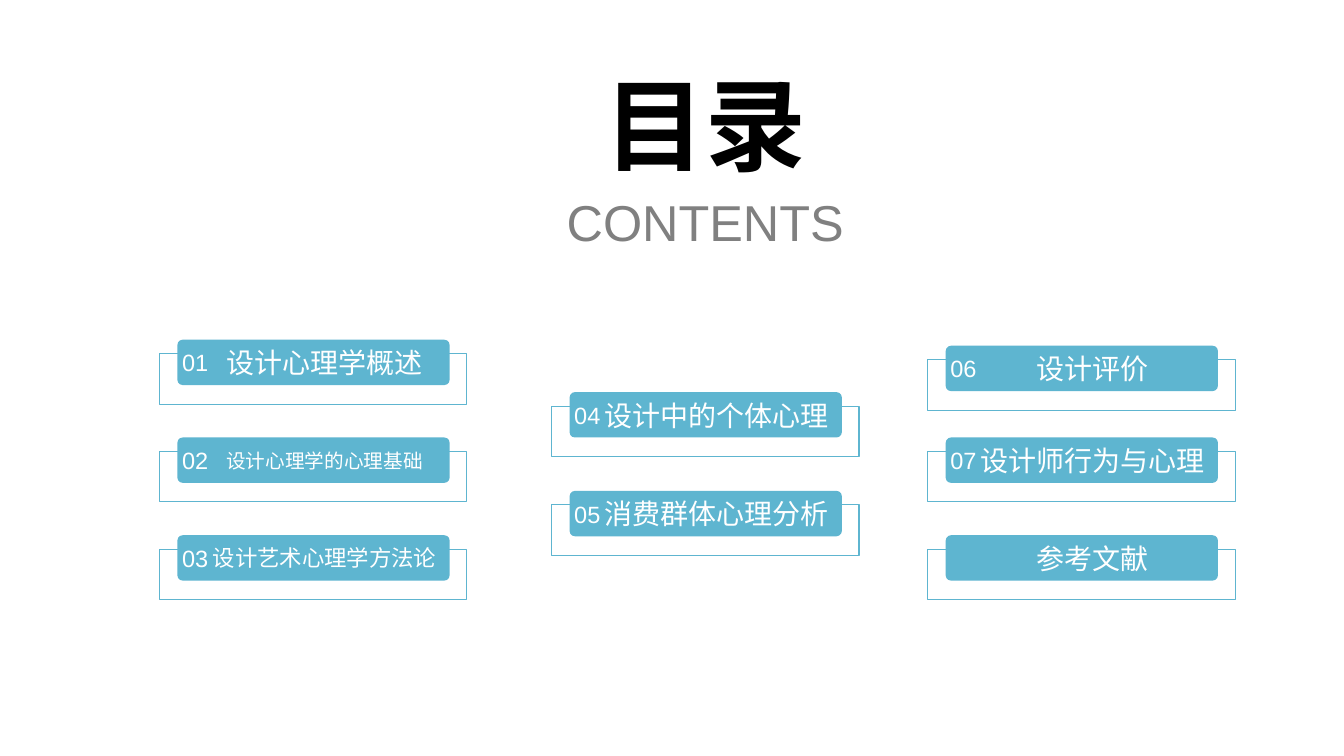
from dataclasses import dataclass

from lxml import etree
from pptx import Presentation
from pptx.dml.color import RGBColor
from pptx.enum.shapes import MSO_SHAPE
from pptx.enum.text import MSO_ANCHOR, MSO_AUTO_SIZE, PP_ALIGN
from pptx.oxml.ns import qn
from pptx.util import Inches, Pt

RECTANGLE = MSO_SHAPE.RECTANGLE
ROUNDED = MSO_SHAPE.ROUNDED_RECTANGLE
MIDDLE = MSO_ANCHOR.MIDDLE
CENTER = PP_ALIGN.CENTER
NO_AUTOFIT = MSO_AUTO_SIZE.NONE
TITLE_ONLY = 5


@dataclass(frozen=True)
class Theme:
    latin: str = "Arial"
    east_asian: str = "Noto Sans CJK SC"
    accent: RGBColor = RGBColor(0x5E, 0xB5, 0xD0)
    black: RGBColor = RGBColor(0, 0, 0)
    gray: RGBColor = RGBColor(0x80, 0x80, 0x80)
    white: RGBColor = RGBColor(255, 255, 255)
    title: float = 72
    subtitle: float = 36
    number: float = 16.8
    entry: float = 20
    entry_medium: float = 16
    entry_small: float = 14
    frame_line: float = 0.75


class ContentsSlide:
    def __init__(self, deck, theme):
        self.theme = theme
        self.slide = deck.slides.add_slide(deck.slide_layouts[TITLE_ONLY])

    def set_text(self, holder, text, size, color, bold=False, insets=(0.1, 0.05, 0.1, 0.05)):
        frame = holder.text_frame
        frame.text = text
        frame.word_wrap = True
        frame.auto_size = NO_AUTOFIT
        frame.vertical_anchor = MIDDLE
        frame.margin_left, frame.margin_top, frame.margin_right, frame.margin_bottom = map(Inches, insets)
        paragraph = frame.paragraphs[0]
        paragraph.alignment = CENTER
        for run in paragraph.runs:
            run.font.size = Pt(size)
            run.font.bold = bold
            run.font.color.rgb = color
            run.font.name = self.theme.latin
            east_asian = etree.SubElement(run.font._element, qn("a:ea"))
            east_asian.set("typeface", self.theme.east_asian)

    def title(self, text, left, top, width, height):
        heading = self.slide.shapes.title
        heading.left, heading.top = Inches(left), Inches(top)
        heading.width, heading.height = Inches(width), Inches(height)
        self.set_text(heading, text, self.theme.title, self.theme.black, bold=True)

    def subtitle(self, text, left, top, width, height):
        box = self.slide.shapes.add_textbox(*map(Inches, (left, top, width, height)))
        self.set_text(box, text, self.theme.subtitle, self.theme.gray)

    def block(self, parent, kind, left, top, width, height, fill=None, line=None):
        shape = parent.shapes.add_shape(kind, *map(Inches, (left, top, width, height)))
        shape.shadow.inherit = False
        if fill is None:
            shape.fill.background()
        else:
            shape.fill.solid()
            shape.fill.fore_color.rgb = fill
        if line is None:
            shape.line.fill.background()
        else:
            shape.line.color.rgb = line
            shape.line.width = Pt(self.theme.frame_line)
        return shape

    def entry(self, number, text, size, left, top):
        theme = self.theme
        group = self.slide.shapes.add_group_shape()
        self.block(group, RECTANGLE, left, top + 0.14, 3.05, 0.5, line=theme.accent)
        bar = self.block(group, ROUNDED, left + 0.18, top, 2.7, 0.45, fill=theme.accent)
        bar.adjustments[0] = 0.117
        self.set_text(bar, text, size, theme.white, insets=(0.25, 0, 0.03, 0))
        if number:
            tag = self.block(group, RECTANGLE, left + 0.22, top, 0.27, 0.45)
            self.set_text(tag, number, theme.number, theme.white, insets=(0, 0, 0, 0))


def main():
    deck = Presentation()
    deck.slide_width, deck.slide_height = Inches(13.33), Inches(7.5)
    theme = Theme()
    contents = ContentsSlide(deck, theme)
    contents.title("目录", 3.81, 0.58, 6.37, 1.28)
    contents.subtitle("CONTENTS", 3.81, 1.86, 6.37, 0.67)

    columns = [
        (1.58, [
            (3.37, "01", "设计心理学概述", theme.entry),
            (4.34, "02", "设计心理学的心理基础", theme.entry_small),
            (5.31, "03", "设计艺术心理学方法论", theme.entry_medium),
        ]),
        (5.47, [
            (3.89, "04", "设计中的个体心理", theme.entry),
            (4.87, "05", "消费群体心理分析", theme.entry),
        ]),
        (9.2, [
            (3.43, "06", "设计评价", theme.entry),
            (4.34, "07", "设计师行为与心理", theme.entry),
            (5.31, None, "参考文献", theme.entry),
        ]),
    ]
    for left, entries in columns:
        for top, number, text, size in entries:
            contents.entry(number, text, size, left, top)

    deck.save("out.pptx")


if __name__ == "__main__":
    main()
